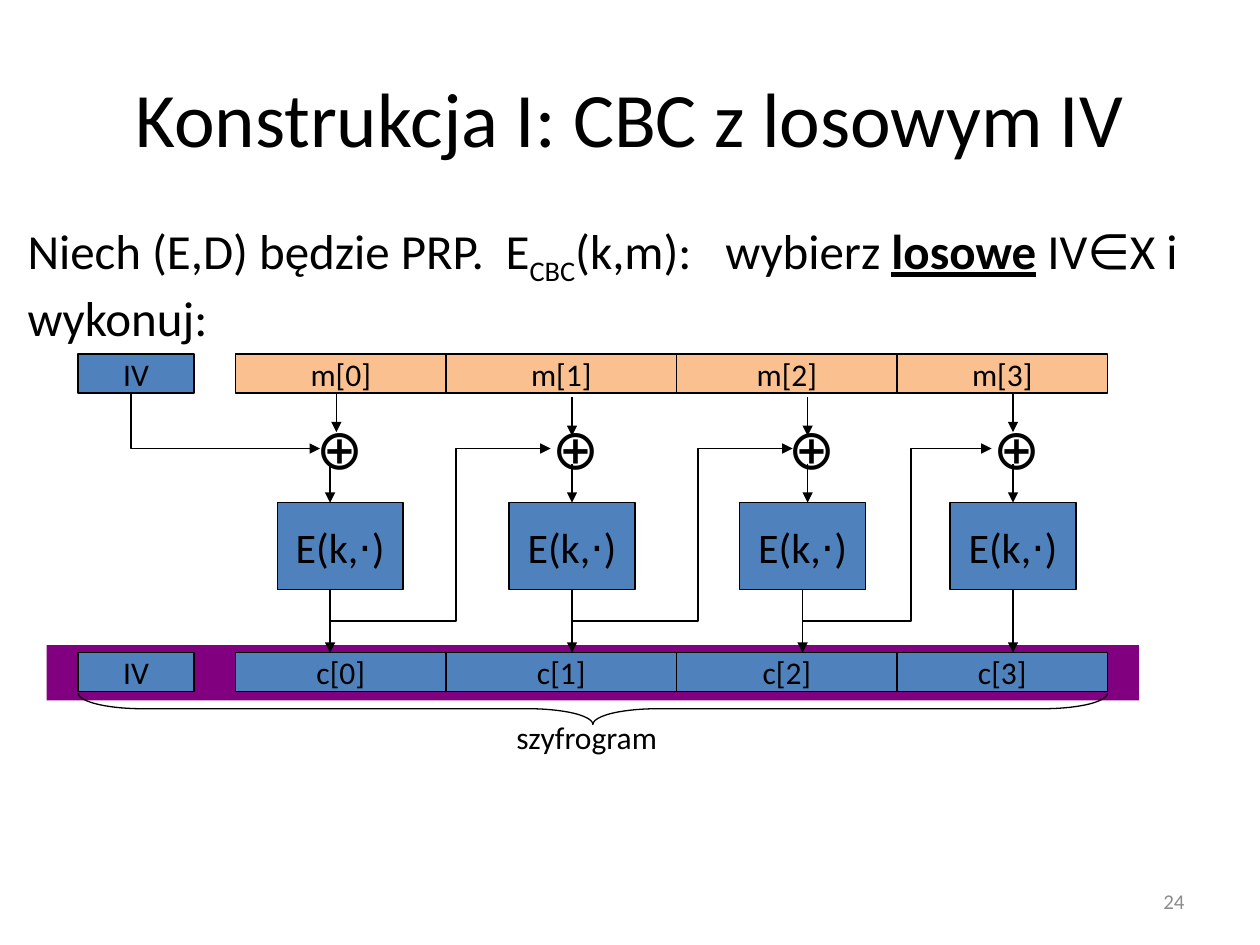
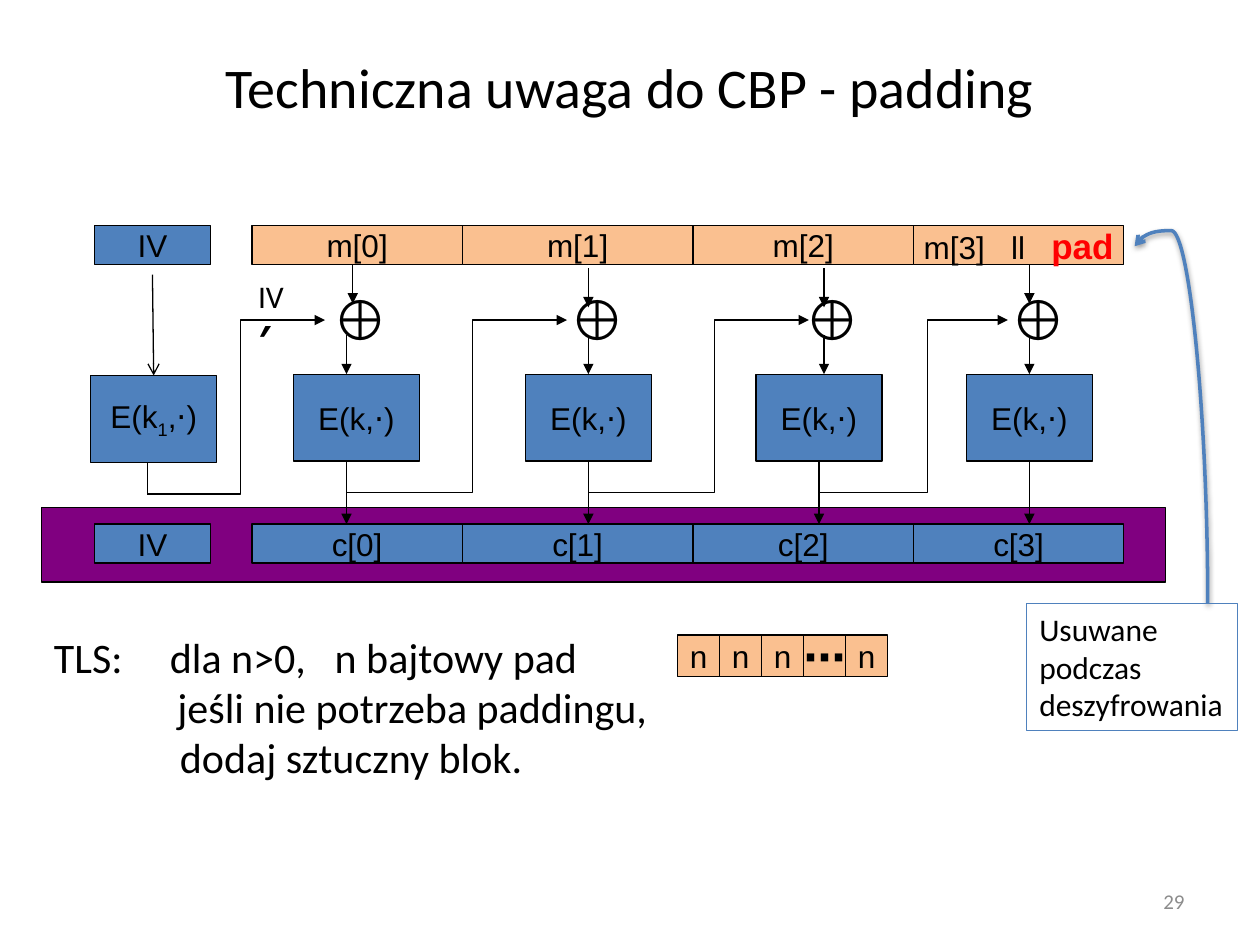
"""Two slides on CBC mode: the random-IV construction and the padding remark."""
from lxml import etree
from pptx import Presentation
from pptx.dml.color import RGBColor
from pptx.enum.shapes import MSO_CONNECTOR, MSO_SHAPE
from pptx.enum.text import MSO_ANCHOR, MSO_AUTO_SIZE, PP_ALIGN
from pptx.oxml.ns import qn
from pptx.util import Inches, Pt

BLACK = RGBColor(0x00, 0x00, 0x00)
GREY = RGBColor(0x8C, 0x8C, 0x8C)
BLUE = RGBColor(0x4F, 0x81, 0xBD)
ORANGE = RGBColor(0xFA, 0xC0, 0x90)
PURPLE = RGBColor(0x80, 0x00, 0x80)
RED = RGBColor(0xFF, 0x00, 0x00)
LEFT, CENTER, RIGHT = PP_ALIGN.LEFT, PP_ALIGN.CENTER, PP_ALIGN.RIGHT


def add_text(s, box, paras, size=18, font="Calibri", color=BLACK, align=CENTER, middle=True,
             wrap=False, grow=False, rect=False, fill=None, line=None, before=0, indents=()):
    """Add a text box or rectangle; a paragraph is a string or a list of (text, format) runs."""
    box = [Inches(v) for v in box]
    if rect:
        sp = s.shapes.add_shape(MSO_SHAPE.RECTANGLE, *box)
        sp.shadow.inherit = False
    else:
        sp = s.shapes.add_textbox(*box)
    if fill is not None:
        sp.fill.solid()
        sp.fill.fore_color.rgb = fill
    else:
        sp.fill.background()
    if line is not None:
        sp.line.color.rgb = line
        sp.line.width = Pt(0.75)
    else:
        sp.line.fill.background()
    tf = sp.text_frame
    tf.word_wrap = wrap
    tf.auto_size = MSO_AUTO_SIZE.SHAPE_TO_FIT_TEXT if grow else MSO_AUTO_SIZE.NONE
    tf.vertical_anchor = MSO_ANCHOR.MIDDLE if middle else MSO_ANCHOR.TOP
    for i, para in enumerate(paras):
        p = tf.add_paragraph() if i else tf.paragraphs[0]
        p.alignment = align
        p.space_before = Pt(before)
        if indents:
            margin, first = indents[i]
            pPr = p._p.get_or_add_pPr()
            pPr.set("marL", str(Inches(margin)))
            pPr.set("indent", str(Inches(first)))
        for text, fmt in [(para, {})] if isinstance(para, str) else para:
            r = p.add_run()
            r.text = text
            r.font.name = font
            r.font.size = Pt(fmt.get("size", size))
            r.font.color.rgb = fmt.get("color", color)
            r.font.bold = fmt.get("bold", False)
            r.font.underline = fmt.get("underline", False)
            rPr = r._r.get_or_add_rPr()
            if "base" in fmt:
                rPr.set("baseline", str(fmt["base"] * 1000))
            if "gap" in fmt:
                rPr.set("spc", str(fmt["gap"] * 100))
    return sp


def add_line(s, points, head="triangle", width=0.75, color=BLACK, kind=MSO_CONNECTOR.STRAIGHT):
    """Add a connector through two points, or an open outline through more."""
    pts = [(Inches(x), Inches(y)) for x, y in points]
    if len(pts) == 2:
        ln = s.shapes.add_connector(kind, *pts[0], *pts[1])
    else:
        fb = s.shapes.build_freeform(*pts[0])
        fb.add_line_segments(pts[1:], close=False)
        ln = fb.convert_to_shape()
        ln.fill.background()
        ln.shadow.inherit = False
    ln.line.color.rgb = color
    ln.line.width = Pt(width)
    spPr = ln.element.spPr
    if head:
        etree.SubElement(spPr.find(qn("a:ln")), qn("a:tailEnd"), type=head)
    if len(pts) == 2:
        etree.SubElement(spPr, qn("a:effectLst"))
    return ln


prs = Presentation()
prs.slide_width, prs.slide_height = Inches(10), Inches(7.5)

GAP = (" ", {"gap": 10})
M3_PAD = [("m[3]", {}), GAP, ("ll", {}), GAP, ("pad", {"size": 20, "color": RED, "bold": True})]
CELL_EDGES = [1.87, 3.54, 5.37, 7.12, 8.79]
CIPHER_X = [2.2, 4.04, 5.87, 7.54]
XOR_X = [2.41, 4.29, 6.16, 7.79]
MSG_ARROWS = [(2.67, 0), (4.54, 0.03), (6.41, 0.03), (8.04, 0)]
XOR_ARROWS = [2.62, 4.54, 6.41, 8.04]
OUT_ARROWS = [2.62, 4.54, 6.37, 8.04]
CHAINS = [(2.62, 3.62, 4.37), (4.54, 5.54, 6.29), (6.37, 7.23, 7.87)]

SLIDES = [
    dict(title="Konstrukcja I: CBC z losowym IV", title_h=1.25, title_size=44, number="24",
         band=(0.37, 5.12, 8.67, 0.44), band_line=None, dx=0, dy=0, font="Calibri",
         cipher_size=24, last="m[3]"),
    dict(title="Techniczna uwaga do CBP - padding", title_h=0.77, title_size=32, number="29",
         band=(0.33, 4.03, 8.92, 0.59), band_line=BLACK, dx=0.13, dy=-1.02, font="Arial",
         cipher_size=18, last=M3_PAD),
]

for d in SLIDES:
    s = prs.slides.add_slide(prs.slide_layouts[6])
    dx, dy, font = d["dx"], d["dy"], d["font"]
    add_text(s, (0.5, 0.3, 9, d["title_h"]), [d["title"]], size=d["title_size"], wrap=True)
    add_text(s, (7.17, 6.95, 2.33, 0.4), [d["number"]], size=12, color=GREY, align=RIGHT, wrap=True)
    add_text(s, d["band"], [], rect=True, fill=PURPLE, line=d["band_line"])

    for y, fill, labels in [(2.81, ORANGE, ["m[0]", "m[1]", "m[2]", d["last"]]),
                            (5.18, BLUE, [f"c[{i}]" for i in range(4)])]:
        add_text(s, (0.62 + dx, y + dy, 0.92, 0.31), ["IV"], font=font, rect=True,
                 fill=BLUE, line=BLACK)
        for x, end, label in zip(CELL_EDGES, CELL_EDGES[1:], labels):
            add_text(s, (x + dx, y + dy, end - x, 0.31), [label], font=font, rect=True,
                     fill=fill, line=BLACK)

    for i, x in enumerate(CIPHER_X):
        cipher = add_text(s, (x + dx, 3.99 + dy, 1, 0.69), ["E(k,⋅)"], size=d["cipher_size"],
                          font=font, rect=True, fill=BLUE, line=BLACK)
        add_text(s, (XOR_X[i] + dx, 3.23 + dy, 0.55, 0.64), ["⊕"], size=32, font=font,
                 align=LEFT, middle=False, grow=True)
        mx, drop = MSG_ARROWS[i]
        add_line(s, [(mx + dx, 3.12 + drop + dy), (mx + dx, 3.43 + drop + dy)])
        xor_x, out_x = XOR_ARROWS[i] + dx, OUT_ARROWS[i] + dx
        into = add_line(s, [(xor_x, 3.68 + dy), (xor_x, 3.99 + dy)])
        out = add_line(s, [(out_x, 4.68 + dy), (out_x, 5.18 + dy)])
        middle_x = x + dx + 0.5
        if abs(xor_x - middle_x) < 0.01:
            into.end_connect(cipher, 0)
        if abs(out_x - middle_x) < 0.01:
            out.begin_connect(cipher, 2)

    for x0, x1, x2 in CHAINS:
        add_line(s, [(x0 + dx, 4.93 + dy), (x1 + dx, 4.93 + dy),
                     (x1 + dx, 3.56 + dy), (x2 + dx, 3.56 + dy)])

s1, s2 = prs.slides

add_text(s1, (0.12, 1.7, 9.75, 1.1), [[
    ("Niech (E,D) będzie PRP.", {}), (" ", {"gap": 6}), ("E", {}), ("CBC", {"base": -25}),
    ("(k,m):", {}), (" ", {"gap": 13}), ("wybierz ", {}),
    ("losowe", {"bold": True, "underline": True}), (" IV∈X i wykonuj:", {})]],
    size=28, align=LEFT, middle=False, wrap=True, before=5.6)
add_line(s1, [(1.04, 3.12), (1.04, 3.56), (2.54, 3.56)], width=1)
brace = s1.shapes.add_shape(MSO_SHAPE.LEFT_BRACE, Inches(4.58), Inches(1.54),
                            Inches(0.25), Inches(8.17))
brace.adjustments[0] = 2.042
brace.rotation = 270
brace.element.spPr.xfrm.set("flipV", "1")
brace.fill.background()
brace.line.color.rgb = BLACK
brace.line.width = Pt(0.75)
brace.shadow.inherit = False
add_text(s1, (4, 5.65, 1.33, 0.4), ["szyfrogram"], align=LEFT, middle=False, grow=True)

add_line(s2, [(1.17, 3.66), (1.17, 3.92)], head=None)
iv_cipher = add_text(s2, (0.72, 2.98, 1, 0.69), [[("E(k", {}), ("1", {"base": -25}), (",⋅)", {})]],
                     font="Arial", rect=True, fill=BLUE, line=BLACK)
add_line(s2, [(1.17, 3.92), (1.91, 3.92), (1.91, 2.54), (2.58, 2.54)])
add_line(s2, [(1.21, 2.18), (1.22, 2.98)], head="arrow").end_connect(iv_cipher, 0)
add_text(s2, (1.95, 2.15, 0.48, 0.5), ["IV", [("′", {"size": 24, "bold": True})]],
         align=LEFT, middle=False)
add_text(s2, (0.33, 4.96, 5.02, 1.31), [
    [("TLS:\tdla n>0,", {}), (" ", {"gap": 11}), ("n bajtowy pad", {})],
    "jeśli nie potrzeba paddingu,", "dodaj sztuczny blok."],
    size=24, align=LEFT, middle=False, wrap=True, grow=True,
    indents=[(0.92, -0.92), (0.98, 0), (1, 0)])
for i, label in enumerate(["n", "n", "n", "⋯", "n"]):
    dots = label == "⋯"
    add_text(s2, (5.38 + i / 3, 5.04, 0.33, 0.33), [[(label, {"bold": dots})]],
             size=24 if dots else 18, font="Arial", rect=True, fill=ORANGE, line=BLACK)

curve = add_line(s2, [(7.88, 3.66), (10.71, 3.08)], head="arrow", width=2, color=BLUE,
                 kind=MSO_CONNECTOR.CURVE)
spPr = curve.element.spPr
spPr.xfrm.set("rot", str(270 * 60000))
guides = spPr.find(qn("a:prstGeom")).get_or_add_avLst()
etree.SubElement(guides, qn("a:gd"), name="adj1", fmla="val 104400")
shadow = etree.SubElement(spPr.find(qn("a:effectLst")), qn("a:outerShdw"), blurRad=str(Pt(3.1)),
                          dist=str(Pt(1.6)), dir=str(90 * 60000), rotWithShape="0")
tint = etree.SubElement(shadow, qn("a:srgbClr"), val=str(BLACK))
etree.SubElement(tint, qn("a:alpha"), val="38000")
add_text(s2, (8.15, 4.79, 1.67, 1.01), ["Usuwane", "podczas", "deszyfrowania"], align=LEFT,
         middle=False, grow=True, rect=True, line=BLUE)

prs.save("out.pptx")
